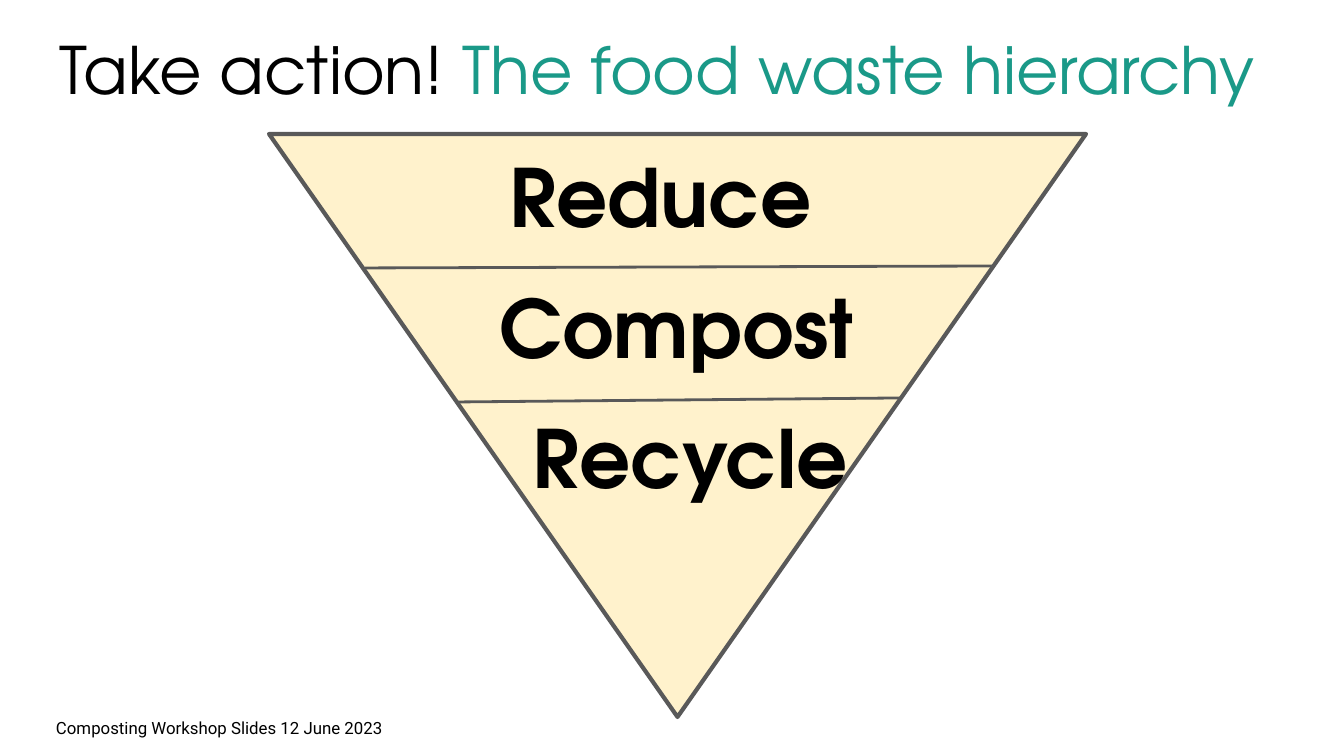
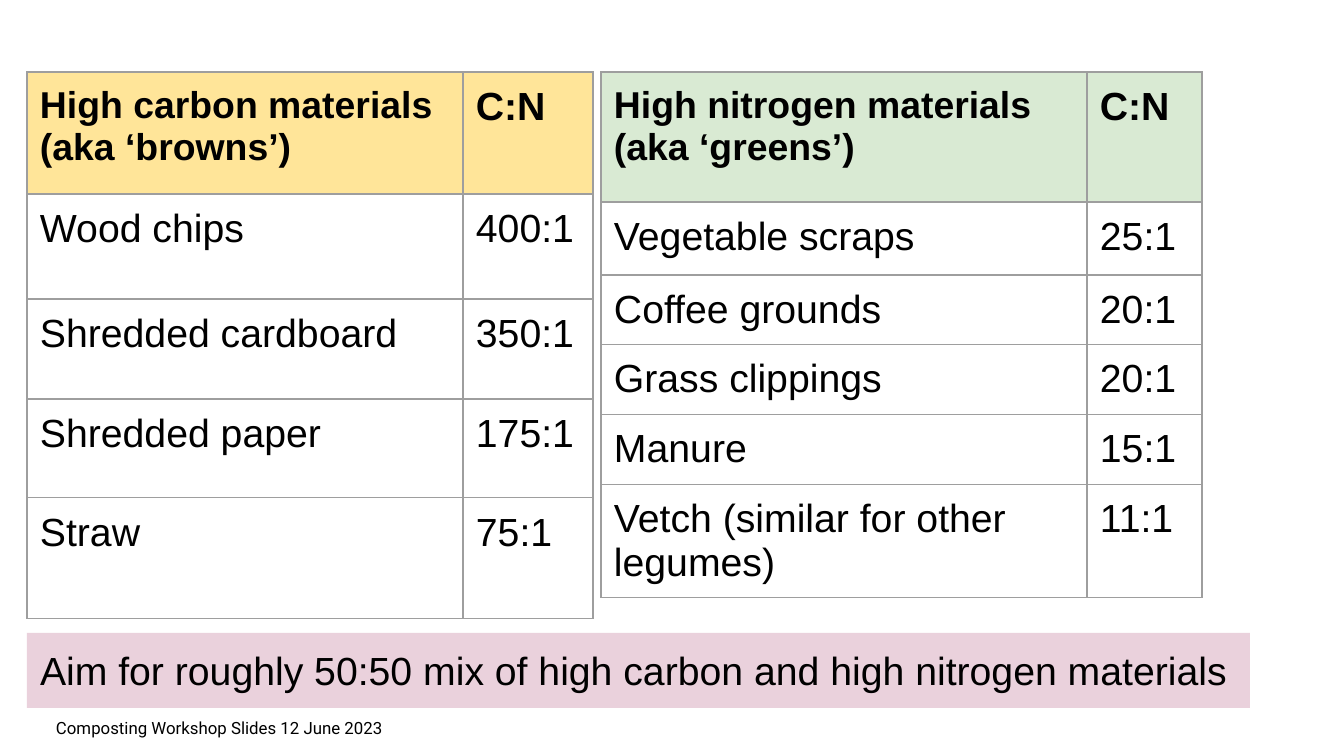
from lxml.etree import SubElement
from pptx import Presentation
from pptx.dml.color import RGBColor
from pptx.enum.shapes import MSO_CONNECTOR, MSO_SHAPE
from pptx.enum.text import MSO_ANCHOR, MSO_AUTO_SIZE, PP_ALIGN
from pptx.oxml.ns import qn
from pptx.util import Emu, Pt

BLACK = RGBColor(0x00, 0x00, 0x00)
TEAL = RGBColor(0x1A, 0x99, 0x88)
CREAM = RGBColor(0xFF, 0xF2, 0xCC)
CHARCOAL = RGBColor(0x59, 0x59, 0x59)
GOLD = RGBColor(0xFF, 0xE5, 0x99)
MINT = RGBColor(0xD9, 0xEA, 0xD3)
PINK = RGBColor(0xEA, 0xD1, 0xDC)
GRID = RGBColor(0x9E, 0x9E, 0x9E)

DISPLAY, BODY, SMALL = "TeX Gyre Adventor", "Arial", "Roboto"
INSET = 13

FOOTER = "Composting Workshop Slides 12 June 2023"
FOOTER_BOX = (43, 692, 1206, 71)

TITLE = [("Take action! ", BLACK), ("The food waste hierarchy ", TEAL)]
TITLE_BOX = (12, 19, 1309, 99)
PYRAMID_BOX = (269, 134, 817, 583)
LEVELS = [
    ("Reduce ", (277, 134, 790, 261), {"align": PP_ALIGN.CENTER}),
    ("Compost", (282, 265, 790, 156), {"align": PP_ALIGN.CENTER}),
    ("Recycle", (296, 395, 790, 156), {"indent": 224}),
]
DIVIDERS = [(365, 268, 993, 266), (457, 402, 900, 398)]

MATERIALS = [
    {
        "origin": (27, 72), "columns": (436, 130), "heights": (122, 105, 100, 99, 121),
        "color": GOLD,
        "rows": [
            ("High carbon materials (aka ‘browns’)", "C:N"),
            ("Wood chips", "400:1"),
            ("Shredded cardboard", "350:1"),
            ("Shredded paper", "175:1"),
            ("Straw", "75:1"),
        ],
    },
    {
        "origin": (601, 72), "columns": (486, 115), "heights": (130, 73, 69, 70, 66, 108),
        "color": MINT,
        "rows": [
            ("High nitrogen materials (aka ‘greens’)", "C:N"),
            ("Vegetable scraps", "25:1"),
            ("Coffee grounds", "20:1"),
            ("Grass clippings", "20:1"),
            ("Manure", "15:1"),
            ("Vetch (similar for other legumes)", "11:1"),
        ],
    },
]
ADVICE = "Aim for roughly 50:50 mix of high carbon and high nitrogen materials"
ADVICE_BOX = (27, 633, 1223, 75)


def px(value):
    return Emu(round(value * 914400 / 134.4))


def scaled(box):
    return [px(value) for value in box]


def write(frame, content, *, font=BODY, size=21, bold=False, color=BLACK,
          align=PP_ALIGN.LEFT, indent=0):
    paragraph = frame.paragraphs[0]
    paragraph.alignment = align
    if indent:
        properties = paragraph._p.get_or_add_pPr()
        properties.set("marL", str(px(indent)))
        properties.set("indent", "0")
    runs = [(content, color)] if isinstance(content, str) else content
    for words, tint in runs:
        run = paragraph.add_run()
        run.text = words
        run.font.name = font
        run.font.size = Pt(size)
        run.font.bold = bold
        run.font.color.rgb = tint


def prepare(frame, anchor=MSO_ANCHOR.TOP):
    frame.auto_size = MSO_AUTO_SIZE.NONE
    frame.word_wrap = True
    frame.vertical_anchor = anchor
    frame.margin_left = frame.margin_right = px(INSET)
    frame.margin_top = frame.margin_bottom = px(INSET)
    return frame


def add_text(slide, content, box, anchor=MSO_ANCHOR.TOP, **style):
    label = slide.shapes.add_textbox(*scaled(box))
    write(prepare(label.text_frame, anchor), content, **style)


def add_panel(slide, preset, box, color):
    panel = slide.shapes.add_shape(preset, *scaled(box))
    panel.shadow.inherit = False
    panel.fill.solid()
    panel.fill.fore_color.rgb = color
    panel.line.fill.background()
    return panel


def add_divider(slide, ends):
    divider = slide.shapes.add_connector(MSO_CONNECTOR.STRAIGHT, *scaled(ends))
    divider.line.color.rgb = CHARCOAL
    divider.line.width = Pt(1.5)
    SubElement(divider._element.spPr, qn("a:effectLst"))


def add_borders(cell):
    properties = cell._tc.get_or_add_tcPr()
    for side in ("a:lnL", "a:lnR", "a:lnT", "a:lnB"):
        border = SubElement(properties, qn(side), w=str(Pt(0.75)))
        fill = SubElement(border, qn("a:solidFill"))
        SubElement(fill, qn("a:srgbClr"), val=str(GRID))


def add_materials(slide, materials):
    rows, columns, heights = (materials[key] for key in ("rows", "columns", "heights"))
    box = (*materials["origin"], sum(columns), sum(heights))
    table = slide.shapes.add_table(len(rows), len(columns), *scaled(box)).table
    table.first_row = table.horz_banding = False
    for column, width in zip(table.columns, columns):
        column.width = px(width)
    for r, (row, height) in enumerate(zip(rows, heights)):
        table.rows[r].height = px(height)
        for c, words in enumerate(row):
            cell = table.cell(r, c)
            cell.margin_left = cell.margin_right = px(INSET)
            cell.margin_top = cell.margin_bottom = px(INSET)
            add_borders(cell)
            if r == 0:
                cell.fill.solid()
                cell.fill.fore_color.rgb = materials["color"]
            else:
                cell.fill.background()
            write(cell.text_frame, words, size=20 if r == c == 0 else 21, bold=r == 0)


def add_footer(slide):
    add_text(slide, FOOTER, FOOTER_BOX, MSO_ANCHOR.MIDDLE, font=SMALL, size=9)


def build_hierarchy(deck):
    slide = deck.slides.add_slide(deck.slide_layouts[5])
    title = slide.shapes.title
    title.left, title.top, title.width, title.height = scaled(TITLE_BOX)
    write(prepare(title.text_frame, MSO_ANCHOR.MIDDLE), TITLE,
          font=DISPLAY, size=35, align=PP_ALIGN.CENTER)
    pyramid = add_panel(slide, MSO_SHAPE.ISOSCELES_TRIANGLE, PYRAMID_BOX, CREAM)
    pyramid.rotation = 180
    pyramid.line.color.rgb = CHARCOAL
    pyramid.line.width = Pt(2.25)
    for level, box, style in LEVELS:
        add_text(slide, level, box, font=DISPLAY, size=43, bold=True, **style)
    for ends in DIVIDERS:
        add_divider(slide, ends)
    add_footer(slide)


def build_ratios(deck):
    slide = deck.slides.add_slide(deck.slide_layouts[6])
    for materials in MATERIALS:
        add_materials(slide, materials)
    advice = add_panel(slide, MSO_SHAPE.RECTANGLE, ADVICE_BOX, PINK)
    write(prepare(advice.text_frame), ADVICE)
    add_footer(slide)


def main():
    deck = Presentation()
    deck.slide_width, deck.slide_height = px(1344), px(756)
    build_hierarchy(deck)
    build_ratios(deck)
    deck.save("out.pptx")


if __name__ == "__main__":
    main()
